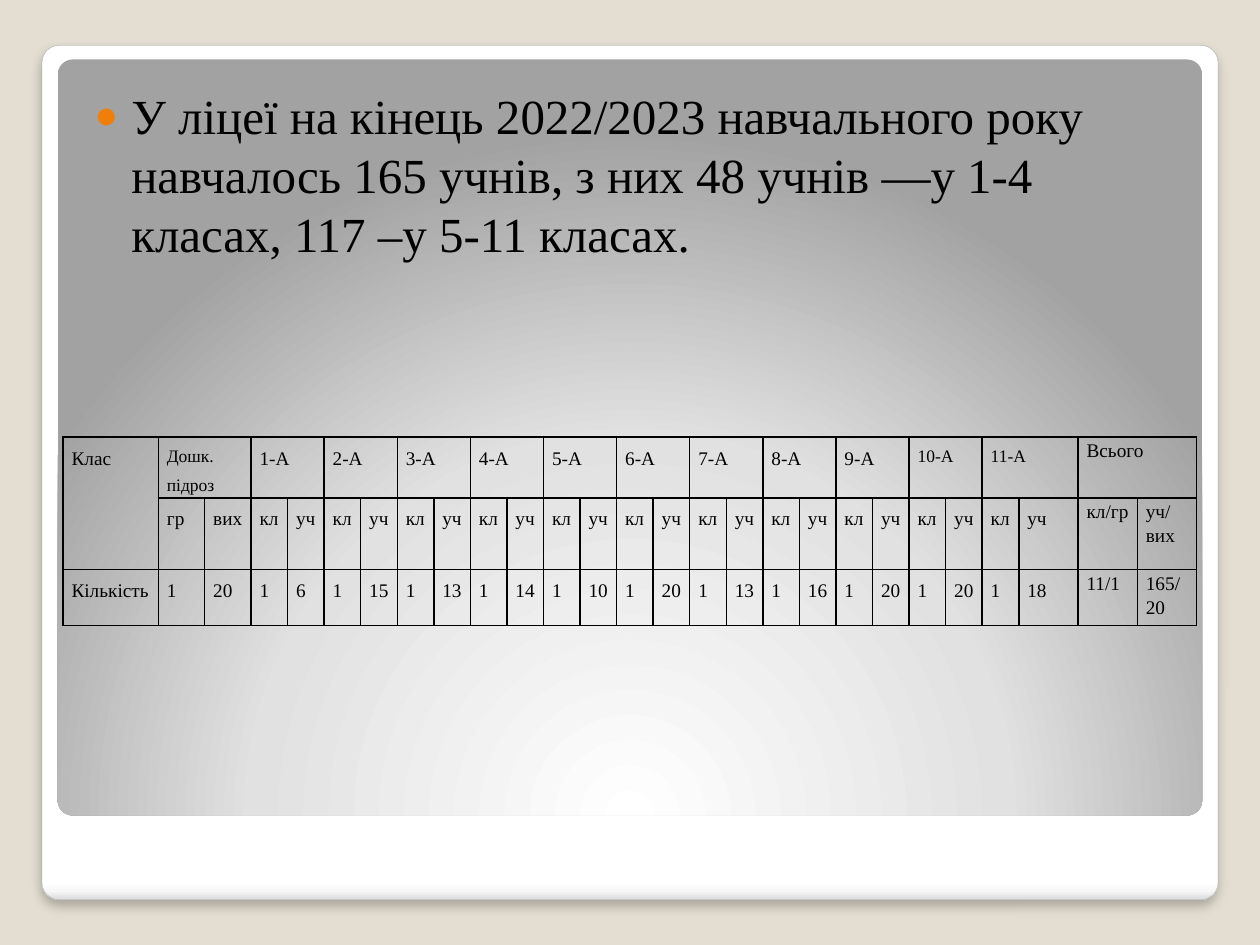
from lxml import etree
from pptx import Presentation
from pptx.dml.color import RGBColor
from pptx.enum.shapes import MSO_SHAPE
from pptx.enum.text import MSO_ANCHOR
from pptx.oxml import parse_xml
from pptx.oxml.ns import qn
from pptx.util import Pt

ROUNDED = MSO_SHAPE.ROUNDED_RECTANGLE
TOP = MSO_ANCHOR.TOP
NS = 'xmlns:a="http://schemas.openxmlformats.org/drawingml/2006/main"'
FONT = "Times New Roman"
BLACK = "000000"

MESSAGE = ("У ліцеї на кінець 2022/2023 навчального року навчалось 165 учнів, "
           "з них 48 учнів —у 1-4 класах, 117 –у 5-11 класах.")
PUPILS = [6, 15, 13, 14, 10, 20, 13, 16, 20, 20, 18]  # grades 1 to 11
COLUMN_WIDTHS = [54.5] + [26.5] * 2 + [20.9] * 21 + [33.9] * 3
ROW_HEIGHTS = [34.8, 41, 32]


def color(hex_code):
    return RGBColor.from_string(hex_code)


def add_panel(slide, left, top, width, height, stops, direction):
    """Rounded panel with a gradient; direction is the gradient's a:lin or a:path."""
    panel = slide.shapes.add_shape(ROUNDED, Pt(left), Pt(top), Pt(width), Pt(height))
    panel.adjustments[0] = 0.02
    panel.shadow.inherit = False
    panel.line.fill.background()
    stop_xml = "".join(f'<a:gs pos="{position * 1000}"><a:srgbClr val="{shade}"/></a:gs>'
                       for position, shade in stops)
    gradient = parse_xml(f'<a:gradFill {NS} rotWithShape="1"><a:gsLst>{stop_xml}</a:gsLst>'
                         f'{direction}</a:gradFill>')
    panel._element.spPr.find(qn("a:prstGeom")).addnext(gradient)
    return panel


def add_soft_shadow(panel):
    effects = panel._element.spPr.find(qn("a:effectLst"))
    effects.append(parse_xml(
        f'<a:outerShdw {NS} blurRad="{Pt(6)}" dist="{Pt(4)}" dir="5400000" rotWithShape="0">'
        f'<a:srgbClr val="{BLACK}"><a:alpha val="25000"/></a:srgbClr></a:outerShdw>'))


def format_paragraph(paragraph, size):
    paragraph.font.name = FONT
    paragraph.font.size = Pt(size)
    paragraph.font.color.rgb = color(BLACK)


def set_bullet(paragraph, shade, percent, indent):
    properties = paragraph._p.get_or_add_pPr()
    properties.set("marL", str(Pt(indent)))
    properties.set("indent", str(-Pt(indent)))
    bullet_color = etree.Element(qn("a:buClr"))
    etree.SubElement(bullet_color, qn("a:srgbClr"), val=shade)
    bullet_parts = [bullet_color,
                    etree.Element(qn("a:buSzPct"), val=str(percent * 1000)),
                    etree.Element(qn("a:buFont"), typeface="Arial"),
                    etree.Element(qn("a:buChar"), char="●")]
    # Bullet settings come after spacing and before the default run properties
    for part in bullet_parts:
        properties.find(qn("a:defRPr")).addprevious(part)


def fill_message(slide):
    body = slide.placeholders[1]
    body.left, body.top, body.width, body.height = Pt(39.6), Pt(41.8), Pt(644.4), Pt(329.8)
    frame = body.text_frame
    frame.margin_left, frame.margin_top = Pt(14.4), Pt(7.2)
    frame.margin_right, frame.margin_bottom = Pt(7.2), Pt(3.6)
    frame.vertical_anchor = TOP
    frame.text = MESSAGE
    message = frame.paragraphs[0]
    message.space_before = Pt(2.5)
    format_paragraph(message, 28)
    set_bullet(message, "F07F09", 80, 21)
    slide.shapes._spTree.append(body._element)  # bring in front of the panels


def set_borders(cell):
    properties = cell._tc.get_or_add_tcPr()
    for index, side in enumerate(("lnL", "lnR", "lnT", "lnB")):
        properties.insert(index, parse_xml(
            f'<a:{side} {NS} w="{Pt(1)}"><a:solidFill><a:srgbClr val="{BLACK}"/>'
            f'</a:solidFill></a:{side}>'))


def format_cell(cell, text, size, is_total):
    cell.text = text
    cell.margin_left = cell.margin_right = Pt(4.9)
    cell.margin_top = cell.margin_bottom = 0
    cell.vertical_anchor = TOP
    cell.fill.background()
    set_borders(cell)
    for paragraph in cell.text_frame.paragraphs:
        paragraph.line_spacing = 1.15 if is_total else 1.5
        if is_total:
            paragraph.space_after = Pt(10)
        format_paragraph(paragraph, size)


def table_rows():
    groups = ["Дошк.\nпідроз"] + [f"{grade}-А" for grade in range(1, 12)] + ["Всього"]
    header = ["Клас"]
    for group in groups:
        header += [group, ""]
    units = ["", "гр", "вих"] + ["кл", "уч"] * len(PUPILS) + ["кл/гр", "уч/вих"]
    counts = ["Кількість", "1", "20"]
    for pupils in PUPILS:
        counts += ["1", str(pupils)]
    return [header, units, counts + ["11/1", "165/20"]]


def add_class_table(slide):
    rows = table_rows()
    column_count = len(COLUMN_WIDTHS)
    classes = slide.shapes.add_table(len(rows), column_count, Pt(36), Pt(249.8),
                                     Pt(648), Pt(sum(ROW_HEIGHTS))).table
    classes.first_row = classes.horz_banding = False
    for column, width in zip(classes.columns, COLUMN_WIDTHS):
        column.width = Pt(width)
    for row, height in zip(classes.rows, ROW_HEIGHTS):
        row.height = Pt(height)

    small_headers = ("Дошк.\nпідроз", "10-А", "11-А")
    for r, texts in enumerate(rows):
        for c, text in enumerate(texts):
            size = 10 if text in small_headers else 11
            format_cell(classes.cell(r, c), text, size, c >= column_count - 2)

    # Row label spans both header rows; each group spans its two columns
    classes.cell(0, 0).merge(classes.cell(1, 0))
    for c in range(1, column_count, 2):
        classes.cell(0, c).merge(classes.cell(0, c + 1))


def main():
    deck = Presentation()
    deck.slide_width, deck.slide_height = Pt(720), Pt(540)
    slide = deck.slides.add_slide(deck.slide_layouts[1])
    title = slide.shapes.title._element
    title.getparent().remove(title)
    slide.background.fill.solid()
    slide.background.fill.fore_color.rgb = color("E3DED1")

    # White card and the grey panel on it
    card = add_panel(slide, 24, 25.9, 672, 488.2,
                     [(0, "FFFFFF"), (98, "FFFFFF"), (99, "F7F7F7"), (100, "DADADA")],
                     '<a:lin ang="5400000" scaled="0"/>')
    card.line.color.rgb = color("A4A4A4")
    card.line.width = Pt(0.16)
    add_soft_shadow(card)
    add_panel(slide, 33, 34, 654, 432,
              [(0, "FFFFFF"), (55, "E1E1E1"), (100, "A2A2A2")],
              '<a:path path="circle">'
              '<a:fillToRect l="50000" t="175000" r="50000" b="-75000"/></a:path>')

    fill_message(slide)
    add_class_table(slide)
    deck.save("out.pptx")


if __name__ == "__main__":
    main()
